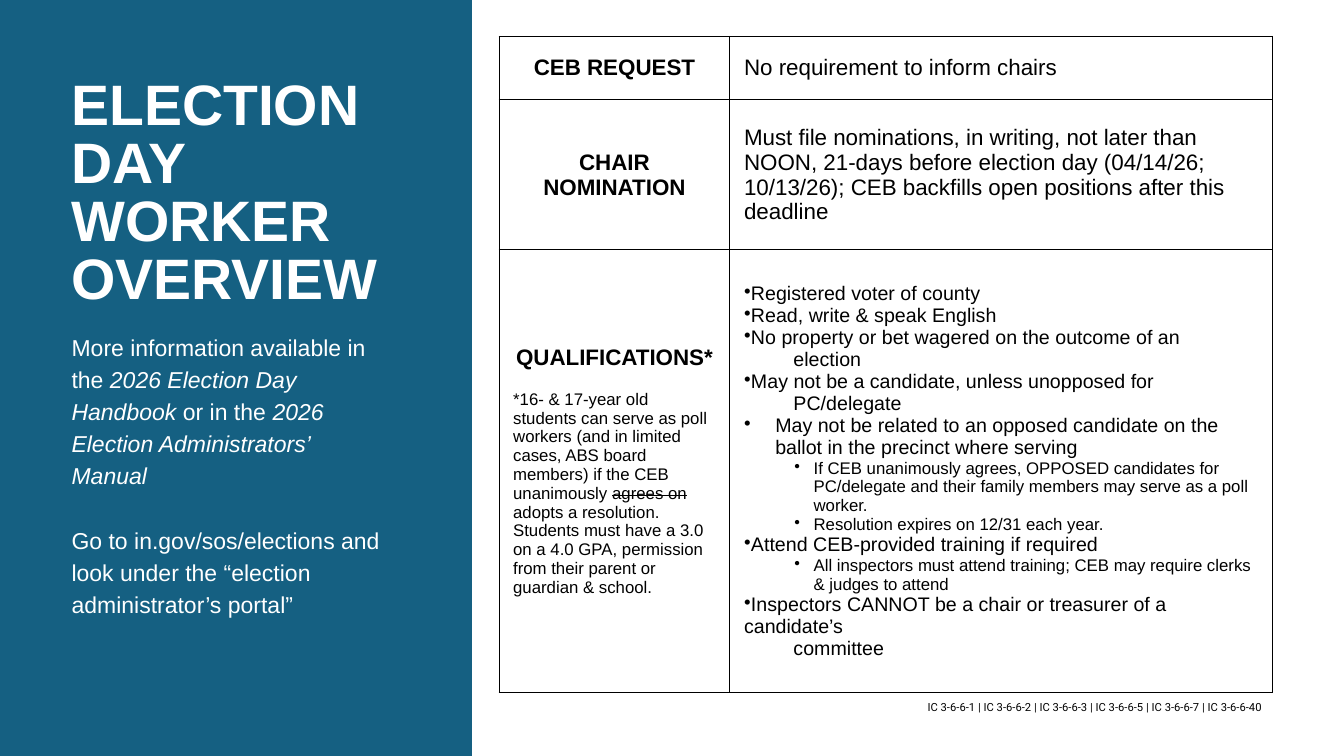
"""Build the election day worker overview slide."""
from lxml.etree import SubElement
from pptx import Presentation
from pptx.dml.color import RGBColor
from pptx.enum.shapes import MSO_SHAPE as SHAPE
from pptx.enum.text import MSO_ANCHOR as ANCHOR, MSO_AUTO_SIZE as AUTO, PP_ALIGN as ALIGN
from pptx.oxml import parse_xml
from pptx.oxml.ns import nsdecls, qn
from pptx.util import Pt

PX = 9144
BLUE = RGBColor(0x15, 0x60, 0x82)
WHITE = RGBColor(0xFF, 0xFF, 0xFF)
BLACK = RGBColor(0, 0, 0)


def add_run(p, text, size, color=BLACK, bold=False, italic=False, font="Arial"):
    r = p.add_run()
    r.text = text
    r.font.size, r.font.name = Pt(size), font
    r.font.bold, r.font.italic = bold, italic
    r.font.color.rgb = color
    return r


def set_bullet(p, left, hanging, char=None):
    pPr = p._p.get_or_add_pPr()
    pPr.set("marL", str(left * PX))
    pPr.set("indent", str(-hanging * PX))
    if char:
        SubElement(pPr, qn("a:buChar")).set("char", char)
    else:
        SubElement(pPr, qn("a:buNone"))


prs = Presentation()
prs.slide_width, prs.slide_height = 1333 * PX, 750 * PX
s = prs.slides.add_slide(prs.slide_layouts[1])
title, body = s.shapes.title, s.placeholders[1]

panel = s.shapes.add_shape(SHAPE.RECTANGLE, 0, 0, 468 * PX, 750 * PX)
panel.shadow.inherit = False
panel.fill.solid()
panel.fill.fore_color.rgb = BLUE
panel.line.fill.background()
s.shapes._spTree.insert(2, panel._element)

for sp, top, width, height in ((title, 78, 351, 236), (body, 326, 306, 256)):
    sp.left, sp.top, sp.width, sp.height = 71 * PX, top * PX, width * PX, height * PX
    tf = sp.text_frame
    tf.margin_left = tf.margin_top = tf.margin_right = tf.margin_bottom = 0
    tf.word_wrap, tf.auto_size, tf.vertical_anchor = True, AUTO.NONE, ANCHOR.TOP

tf = title.text_frame
for i, line in enumerate(("ELECTION DAY", "WORKER OVERVIEW")):
    p = tf.add_paragraph() if i else tf.paragraphs[0]
    p.alignment, p.line_spacing, p.space_before = ALIGN.LEFT, Pt(41.5), Pt(0)
    add_run(p, line, 40.7, WHITE, bold=True)

INFO = (
    (("More information available in the ", False),
     ("2026 Election Day Handbook ", True),
     ("or in the ", False),
     ("2026 Election Administrators’ Manual", True)),
    (("Go to in.gov/sos/elections and look under the “election administrator’s portal”", False),),
)
tf = body.text_frame
for i, runs in enumerate(INFO):
    p = tf.add_paragraph() if i else tf.paragraphs[0]
    p.alignment, p.line_spacing, p.space_before = ALIGN.LEFT, Pt(23), Pt(23 * i)
    set_bullet(p, 0, 0)
    for text, italic in runs:
        add_run(p, text, 16.4, WHITE, italic=italic)

ROWS = (
    ("CEB REQUEST", "No requirement to inform chairs", 63),
    ("CHAIR NOMINATION",
     "Must file nominations, in writing, not later than NOON, 21-days before election day "
     "(04/14/26; 10/13/26); CEB backfills open positions after this deadline", 149),
    ("QUALIFICATIONS*", None, 439),
)
table = s.shapes.add_table(3, 2, 495 * PX, 36 * PX, 767 * PX, 651 * PX).table
table.first_row = table.horz_banding = False
table.columns[0].width, table.columns[1].width = 229 * PX, 538 * PX
for row, (heading, text, height) in enumerate(ROWS):
    table.rows[row].height = height * PX
    p = table.cell(row, 0).text_frame.paragraphs[0]
    p.alignment = ALIGN.CENTER
    add_run(p, heading, 16, bold=True)
    if text:
        add_run(table.cell(row, 1).text_frame.paragraphs[0], text, 16)

for cell in table.iter_cells():
    cell.vertical_anchor = ANCHOR.MIDDLE
    cell.margin_left = cell.margin_top = cell.margin_right = cell.margin_bottom = 14 * PX
    cell.fill.solid()
    cell.fill.fore_color.rgb = WHITE
    for i, side in enumerate(("lnL", "lnR", "lnT", "lnB")):
        cell._tc.get_or_add_tcPr().insert(i, parse_xml(
            f'<a:{side} {nsdecls("a")} w="{Pt(0.75)}"><a:solidFill>'
            f'<a:srgbClr val="{BLACK}"/></a:solidFill></a:{side}>'))

tf = table.cell(2, 0).text_frame
tf.paragraphs[0].space_after = Pt(14)
p = tf.add_paragraph()
add_run(p, "*16- & 17-year old students can serve as poll workers (and in limited cases, "
        "ABS board members) if the CEB unanimously ", 12)
add_run(p, "agrees on ", 12).font._element.set("strike", "sngStrike")
add_run(p, "adopts a resolution. Students must have a 3.0 on a 4.0 GPA, permission from "
        "their parent or guardian & school.", 12)

STYLES = {
    "main": (0, 0, "•", 14),
    "rest": (49, 0, None, 14),
    "hang": (31, 31, "•", 14),
    "sub": (69, 19, "•", 12),
}
QUALIFICATIONS = (
    ("main", "Registered voter of county"),
    ("main", "Read, write & speak English"),
    ("main", "No property or bet wagered on the outcome of an"),
    ("rest", "election"),
    ("main", "May not be a candidate, unless unopposed for"),
    ("rest", "PC/delegate"),
    ("hang", "May not be related to an opposed candidate on the ballot in the precinct where serving"),
    ("sub", "If CEB unanimously agrees, OPPOSED candidates for PC/delegate and their family "
            "members may serve as a poll worker."),
    ("sub", "Resolution expires on 12/31 each year."),
    ("main", "Attend CEB-provided training if required"),
    ("sub", "All inspectors must attend training; CEB may require clerks & judges to attend"),
    ("main", "Inspectors CANNOT be a chair or treasurer of a candidate’s"),
    ("rest", "committee"),
)
tf = table.cell(2, 1).text_frame
for i, (style, text) in enumerate(QUALIFICATIONS):
    left, hanging, char, size = STYLES[style]
    p = tf.add_paragraph() if i else tf.paragraphs[0]
    p.level = 1 if style == "sub" else 0
    set_bullet(p, left, hanging, char)
    add_run(p, text, size)

tf = s.shapes.add_textbox(870 * PX, 690 * PX, 392 * PX, 24 * PX).text_frame
tf.word_wrap = True
p = tf.paragraphs[0]
p.alignment = ALIGN.RIGHT
codes = " | ".join(f"IC 3-6-6-{n}" for n in (1, 2, 3, 5, 7, 40))
add_run(p, codes, 8, font="Roboto")

prs.save("out.pptx")
